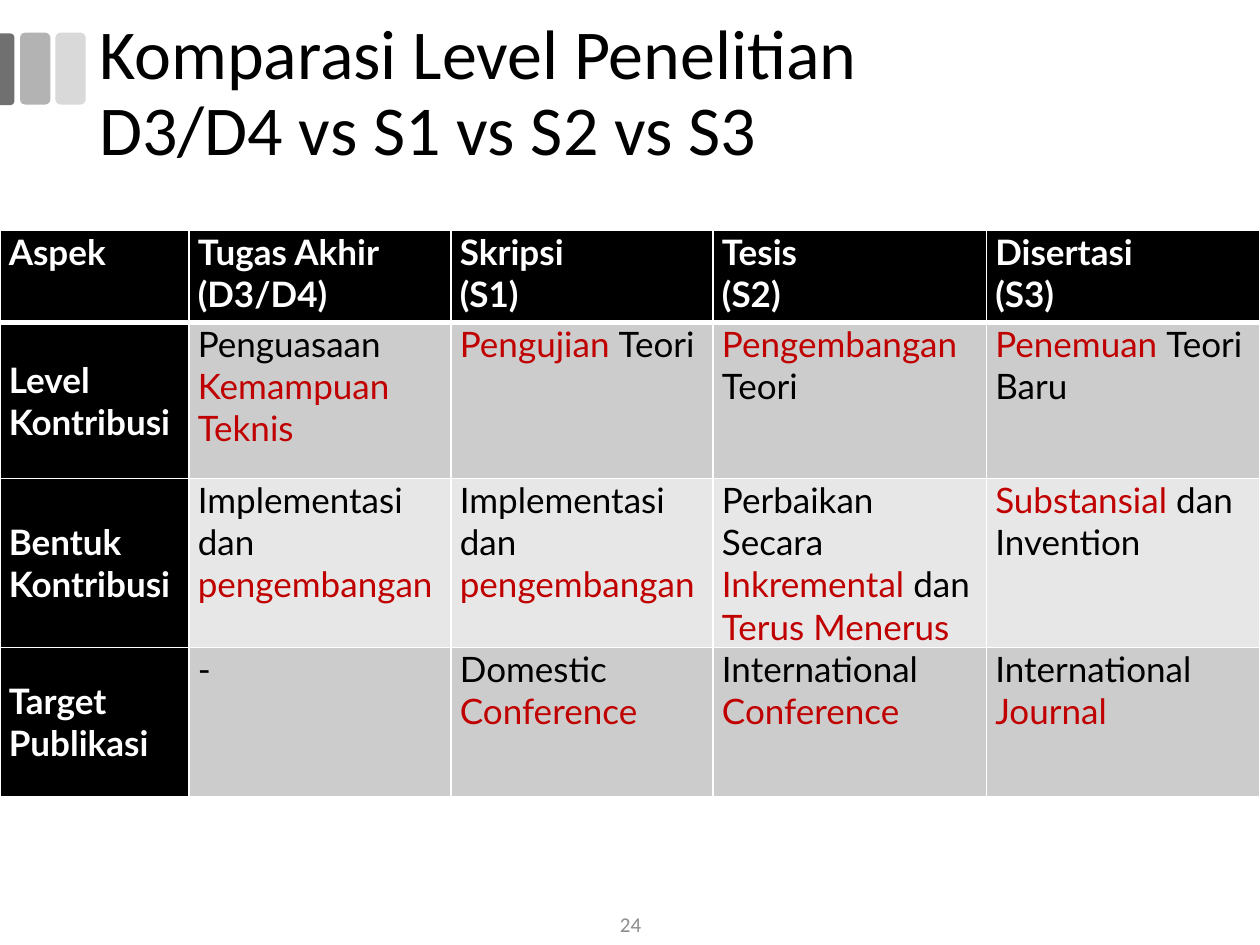
"""Build the slide that compares research levels from D3/D4 to S3."""
from lxml.etree import SubElement
from pptx import Presentation
from pptx.dml.color import RGBColor
from pptx.enum.shapes import MSO_SHAPE
from pptx.enum.text import MSO_ANCHOR, PP_ALIGN
from pptx.oxml.ns import qn
from pptx.util import Inches, Pt

BLACK = RGBColor(0x00, 0x00, 0x00)
WHITE = RGBColor(0xFF, 0xFF, 0xFF)
RED = RGBColor(0xC0, 0x00, 0x00)
GREY = RGBColor(0x8C, 0x8C, 0x8C)
DARK = RGBColor(0x70, 0x70, 0x70)
MID = RGBColor(0xB3, 0xB3, 0xB3)
PALE = RGBColor(0xD9, 0xD9, 0xD9)
BAND = [RGBColor(0xCC, 0xCC, 0xCC), RGBColor(0xE7, 0xE7, 0xE7)]


def write(par, text, form):
    """Write text, with line breaks at newlines and red between asterisks."""
    for row, line in enumerate(text.split("\n")):
        if row:
            par.add_line_break()
        for pos, part in enumerate(line.split("*")):
            if not part:
                continue
            run = par.add_run()
            run.text = part
            for key, val in form.items():
                if key != "color":
                    setattr(run.font, key, val)
            run.font.color.rgb = RED if pos % 2 else form["color"]


def edge(cell, sides):
    """Draw white cell borders of the given widths in points."""
    props = cell._tc.get_or_add_tcPr()
    for side, width in sides.items():
        line = SubElement(props, qn(f"a:ln{side}"), w=str(Pt(width)))
        fill = SubElement(line, qn("a:solidFill"))
        SubElement(fill, qn("a:srgbClr"), val=str(WHITE))


deck = Presentation()
deck.slide_width, deck.slide_height = Inches(10), Inches(7.5)
slide = deck.slides.add_slide(deck.slide_layouts[6])
shapes = slide.shapes

bars = [
    (MSO_SHAPE.ROUNDED_RECTANGLE, (0.44, 0.26, 0.24, 0.57), PALE),
    (MSO_SHAPE.ROUNDED_RECTANGLE, (0.16, 0.26, 0.24, 0.57), MID),
    (MSO_SHAPE.ROUND_2_SAME_RECTANGLE, (-0.23, 0.49, 0.57, 0.12), DARK),
]
for kind, place, color in bars:
    bar = shapes.add_shape(kind, *map(Inches, place))
    bar.shadow.inherit = False
    bar.fill.solid()
    bar.fill.fore_color.rgb = color
    bar.line.fill.background()
bar.rotation = 90
bar.adjustments[0] = 0.29

rows = [
    ["Aspek", "Tugas Akhir\n(D3/D4)", "Skripsi\n(S1)", "Tesis\n(S2)", "Disertasi\n(S3)"],
    ["Level Kontribusi", "Penguasaan *Kemampuan Teknis*", "*Pengujian *Teori",
     "*Pengembangan *Teori", "*Penemuan *Teori Baru"],
    ["Bentuk Kontribusi", "Implementasi dan *pengembangan*",
     "Implementasi dan *pengembangan*",
     "Perbaikan Secara *Inkremental *dan *Terus Menerus*",
     "*Substansial *dan Invention"],
    ["Target Publikasi", "-", "Domestic *Conference*",
     "International *Conference*", "International *Journal*"],
]
wide = [1.5, 2.08, 2.08, 2.17, 2.17]
high = [0.73, 1.24, 1.34, 1.18]
table = shapes.add_table(
    len(rows), len(wide), Inches(0), Inches(1.83), Inches(sum(wide)), Inches(sum(high))
).table
table.first_col = True
for col, size in zip(table.columns, wide):
    col.width = Inches(size)
for row, size in zip(table.rows, high):
    row.height = Inches(size)

inset = {
    "margin_left": Inches(0.07), "margin_right": Inches(0.07),
    "margin_top": 0, "margin_bottom": 0,
}
for r, texts in enumerate(rows):
    for c, text in enumerate(texts):
        cell = table.cell(r, c)
        head = r == 0 or c == 0
        for key, val in inset.items():
            setattr(cell, key, val)
        cell.vertical_anchor = MSO_ANCHOR.MIDDLE if r and not c else MSO_ANCHOR.TOP
        edge(cell, {"L": 1, "R": 1, "T": 3 if r == 1 else 1, "B": 1 if r else 3})
        cell.fill.solid()
        cell.fill.fore_color.rgb = BLACK if head else BAND[(r - 1) % 2]
        par = cell.text_frame.paragraphs[0]
        par.space_after = Pt(11)
        write(par, text, {"name": "Lato", "size": Pt(20), "bold": head,
                          "color": WHITE if head else BLACK})

notes = [
    ("Komparasi Level Penelitian\nD3/D4 vs S1 vs S2 vs S3", (0.69, 0.17, 9.3, 1.17),
     {"alignment": PP_ALIGN.LEFT, "line_spacing": 0.9},
     {"name": "Calibri", "size": Pt(40), "color": BLACK}),
    ("24", (3.88, 7.17, 2.25, 0.33), {"alignment": PP_ALIGN.CENTER},
     {"name": "Calibri", "size": Pt(12), "color": GREY}),
]
for text, place, style, form in notes:
    frame = shapes.add_textbox(*map(Inches, place)).text_frame
    frame.word_wrap = True
    frame.vertical_anchor = MSO_ANCHOR.MIDDLE
    par = frame.paragraphs[0]
    for key, val in style.items():
        setattr(par, key, val)
    write(par, text, form)

deck.save("out.pptx")
